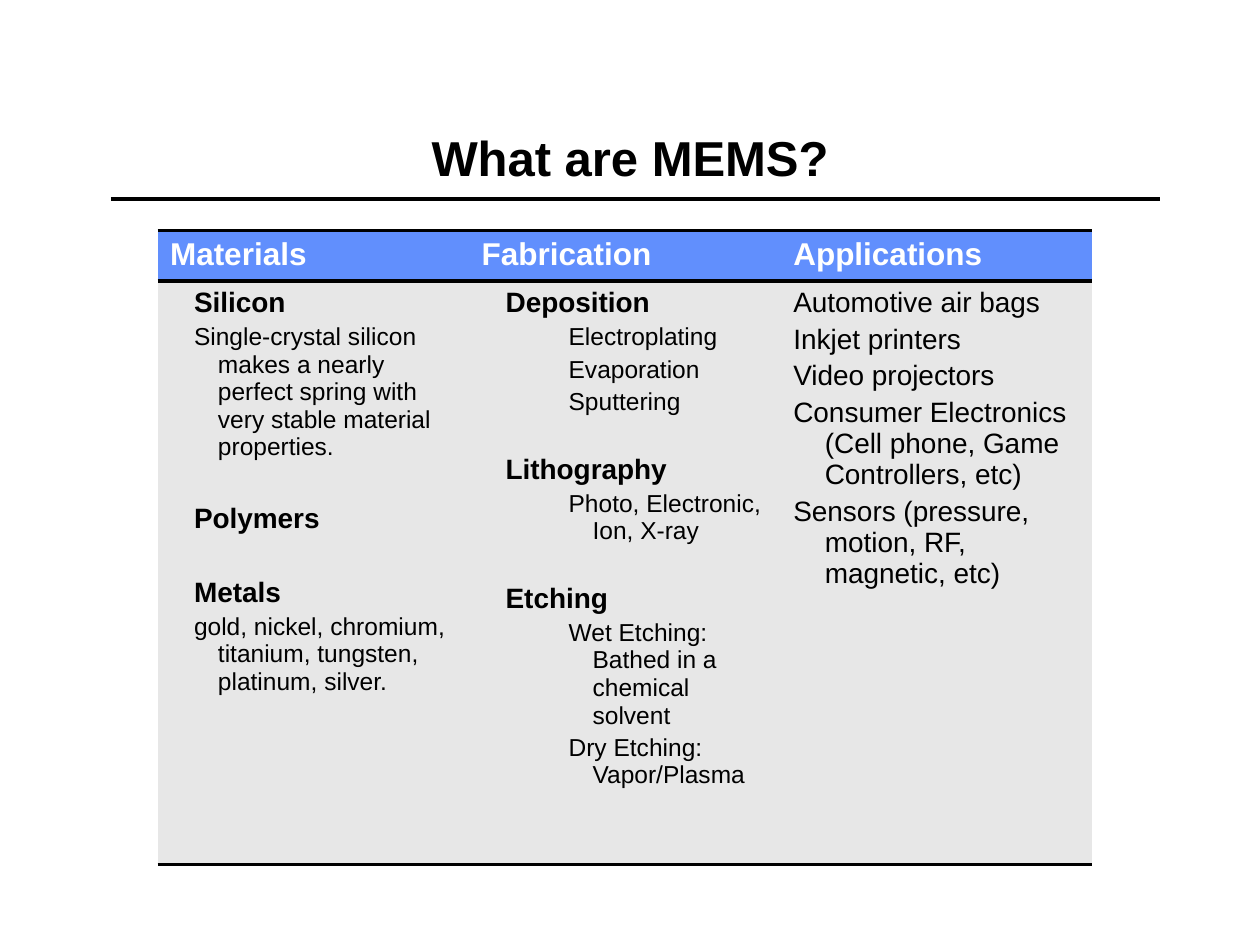
from dataclasses import dataclass

from lxml import etree
from pptx import Presentation
from pptx import util as u
from pptx.dml.color import RGBColor
from pptx.enum import shapes, text
from pptx.oxml.ns import qn

BLACK = RGBColor(0x00, 0x00, 0x00)
WHITE = RGBColor(0xFF, 0xFF, 0xFF)
HEADER_BLUE = RGBColor(0x61, 0x8F, 0xFD)
BODY_GREY = RGBColor(0xE7, 0xE7, 0xE7)
FONT = "Arial"
NO_STYLE = "{2D5ABB26-0587-4C30-8999-92F81FD0307C}"
WIDTH, HEIGHT = u.Inches(10), u.Inches(7.5)
RULE_WEIGHT = u.Pt(2)


@dataclass(frozen=True)
class Style:
    size: float
    bold: bool = False
    color: RGBColor = BLACK
    left: float = 0
    hanging: float = 0

    @property
    def space(self) -> float:
        return 0.2 * self.size


@dataclass(frozen=True)
class Entry:
    wording: str
    style: Style
    gap: float = 0  # extra points above, separating groups


@dataclass(frozen=True)
class Column:
    heading: str
    entries: list[Entry]


TITLE = Style(28, True)
HEADING = Style(18, True, WHITE)
TOPIC = Style(16, True, left=0.38, hanging=0.19)
DETAIL = Style(14, left=0.38, hanging=0.19)
STEP = Style(14, left=0.88, hanging=0.19)
USE = Style(16, left=0.25, hanging=0.25)
WIDE_GAP, GAP = 21, 18.6

COLUMNS = [
    Column("Materials", [
        Entry("Silicon", TOPIC),
        Entry("Single-crystal silicon makes a nearly perfect spring with "
              "very stable material properties.", DETAIL),
        Entry("Polymers", TOPIC, WIDE_GAP),
        Entry("Metals", TOPIC, WIDE_GAP),
        Entry("gold, nickel, chromium, titanium, tungsten, platinum, silver.",
              DETAIL),
    ]),
    Column("Fabrication", [
        Entry("Deposition", TOPIC),
        Entry("Electroplating", STEP),
        Entry("Evaporation", STEP),
        Entry("Sputtering", STEP),
        Entry("Lithography", TOPIC, GAP),
        Entry("Photo, Electronic, Ion, X-ray", STEP),
        Entry("Etching", TOPIC, GAP),
        Entry("Wet Etching: Bathed in a chemical solvent", STEP),
        Entry("Dry Etching: Vapor/Plasma", STEP),
    ]),
    Column("Applications", [
        Entry("Automotive air bags", USE),
        Entry("Inkjet printers", USE),
        Entry("Video projectors", USE),
        Entry("Consumer Electronics (Cell phone, Game Controllers, etc)", USE),
        Entry("Sensors (pressure, motion, RF, magnetic, etc)", USE),
    ]),
]


def write(frame, entries: list[Entry]) -> None:
    for index, entry in enumerate(entries):
        style = entry.style
        para = frame.add_paragraph() if index else frame.paragraphs[0]
        if index:
            para.space_before = u.Pt(round(style.space + entry.gap, 1))
        if style.left:
            properties = para._p.get_or_add_pPr()
            properties.set("marL", str(u.Inches(style.left)))
            properties.set("indent", str(-u.Inches(style.hanging)))
        span = para.add_run()
        span.text = entry.wording
        span.font.name = FONT
        span.font.size = u.Pt(style.size)
        span.font.bold = style.bold
        span.font.color.rgb = style.color


def add_border(cell, side: str) -> None:
    line = etree.Element(qn(f"a:{side}"), w=str(RULE_WEIGHT))
    fill = etree.SubElement(line, qn("a:solidFill"))
    etree.SubElement(fill, qn("a:srgbClr"), val=str(BLACK))
    cell._tc.get_or_add_tcPr().insert(0, line)


def fill_cell(cell, color: RGBColor, entries: list[Entry],
              sides: tuple[str, ...]) -> None:
    cell.fill.solid()
    cell.fill.fore_color.rgb = color
    write(cell.text_frame, entries)
    for side in sides:
        add_border(cell, side)


def add_rule(page) -> None:
    y = u.Inches(1.58)
    rule = page.shapes.add_connector(shapes.MSO_CONNECTOR.STRAIGHT,
                                     u.Inches(0.88), y, u.Inches(9.21), y)
    rule.line.color.rgb = BLACK
    rule.line.width = RULE_WEIGHT
    etree.SubElement(rule._element.spPr, qn("a:effectLst"))


def add_title(page, wording: str) -> None:
    margin = int(WIDTH * 0.075)
    box = page.shapes.add_textbox(margin, u.Inches(0.58),
                                  WIDTH - 2 * margin, u.Inches(1.33))
    frame = box.text_frame
    frame.word_wrap = True
    frame.vertical_anchor = text.MSO_ANCHOR.MIDDLE
    write(frame, [Entry(wording, TITLE)])
    frame.paragraphs[0].alignment = text.PP_ALIGN.CENTER


def add_overview(page, columns: list[Column]) -> None:
    heights = [u.Inches(0.37), u.Inches(4.63)]
    shape = page.shapes.add_table(len(heights), len(columns), int(WIDTH / 8),
                                  u.Inches(1.83), u.Inches(7.42), sum(heights))
    table = shape.table
    table._tbl.tblPr.find(qn("a:tableStyleId")).text = NO_STYLE
    table.horz_banding = False
    for row, height in zip(table.rows, heights):
        row.height = height
    for index, column in enumerate(columns):
        fill_cell(table.cell(0, index), HEADER_BLUE,
                  [Entry(column.heading, HEADING)], ("lnB", "lnT"))
        fill_cell(table.cell(1, index), BODY_GREY, column.entries,
                  ("lnB", "lnT"))


def main() -> None:
    deck = Presentation()
    deck.slide_width, deck.slide_height = WIDTH, HEIGHT
    page = deck.slides.add_slide(deck.slide_layouts[6])
    # Heading and rule
    add_rule(page)
    add_title(page, "What are MEMS?")
    # Three-column overview
    add_overview(page, COLUMNS)
    deck.save("out.pptx")


if __name__ == "__main__":
    main()
